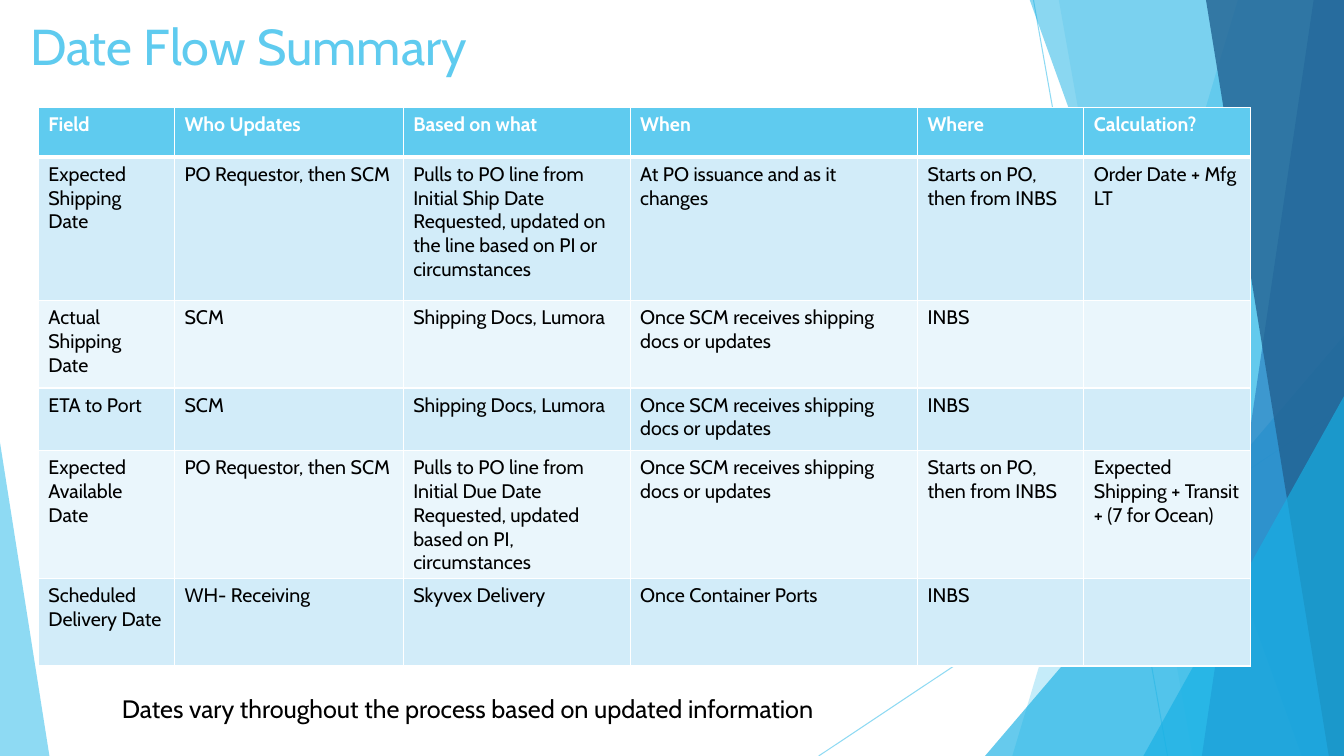
import pptx
import pptx.dml.color
import pptx.enum.shapes
import pptx.enum.text
import pptx.oxml
import pptx.oxml.ns
import pptx.util

Inches = pptx.util.Inches
Pt = pptx.util.Pt

THEME = {
    "font": "Cabin",
    "sky": "5FCBEF", "cyan": "17B0E4", "blue": "2E83C3", "navy": "226292",
    "white": "FFFFFF", "black": "000000",
    "bands": ("D2ECF9", "EAF6FC"),
    "title_size": 36, "note_size": 18, "table_size": 14,
    "hairline": 0.75, "border": 1, "header_border": 3,
}
WIDTH, HEIGHT = 13.33, 7.5

TITLE = "Date Flow Summary"
NOTE = "Dates vary throughout the process based on updated information"
HEADERS = ["Field", "Who Updates", "Based on what", "When", "Where", "Calculation?"]
RECEIPT = "Once SCM receives shipping docs or updates"
ROWS = [
    ["Expected Shipping Date", "PO Requestor, then SCM",
     "Pulls to PO line from Initial Ship Date Requested, updated on the line based on PI or circumstances",
     "At PO issuance and as it changes", "Starts on PO, then from INBS", "Order Date + Mfg LT"],
    ["Actual Shipping Date", "SCM", "Shipping Docs, Lumora", RECEIPT, "INBS", ""],
    ["ETA to Port", "SCM", "Shipping Docs, Lumora", RECEIPT, "INBS", ""],
    ["Expected Available Date", "PO Requestor, then SCM",
     "Pulls to PO line from Initial Due Date Requested, updated based on PI, circumstances",
     RECEIPT, "Starts on PO, then from INBS", "Expected Shipping + Transit + (7 for Ocean)"],
    ["Scheduled Delivery Date", "WH- Receiving", "Skyvex Delivery", "Once Container Ports", "INBS", ""],
]
COLUMN_WIDTHS = [1.35, 2.27, 2.25, 2.85, 1.65, 1.65]
ROW_HEIGHTS = [0.49, 1.42, 0.87, 0.62, 1.12, 0.87]

# Rays: start and end points.
RAYS = [((10.25, 0), (11.58, HEIGHT)), ((WIDTH, 4.03), (8.12, HEIGHT))]
# Shards, back to front. A "band" runs to the right edge: top x, bottom x.
# A "triangle" has left, top, width, height and the place of its tip.
SHARDS = [
    ("band", (12.28, 10.04), "sky", 36),
    ("band", (10.5, 11.83), "sky", 20),
    ("triangle", (9.77, 3.33, 3.56, 4.17, 1), "cyan", 66),
    ("band", (10.21, 12.91), "cyan", 50),
    ("band", (13.03, 11.92), "blue", 70),
    ("band", (11.96, 13.18), "navy", 80),
    ("triangle", (11.34, 3.93, 1.99, 3.57, 1), "cyan", 66),
    ("triangle", (0, 4.39, 0.49, 3.11, 0), "sky", 70),
]


def color(value):
    return pptx.dml.color.RGBColor.from_string(value)


def set_opacity(fill_parent, percent):
    for node in fill_parent.iter(pptx.oxml.ns.qn("a:srgbClr")):
        alpha = node.makeelement(pptx.oxml.ns.qn("a:alpha"), {"val": str(percent * 1000)})
        node.append(alpha)


def add_ray(page, start, end):
    ray = page.shapes.add_connector(
        pptx.enum.shapes.MSO_CONNECTOR.STRAIGHT, *map(Inches, start + end))
    ray.line.color.rgb = color(THEME["sky"])
    ray.line.width = Pt(THEME["hairline"])
    properties = ray._element.spPr
    set_opacity(properties, 70)
    properties.append(properties.makeelement(pptx.oxml.ns.qn("a:effectLst"), {}))


def add_shard(page, kind, geometry, color_name, opacity):
    if kind == "band":
        top_x, bottom_x = geometry
        corners = [(top_x, -0.01), (WIDTH, -0.01), (WIDTH, HEIGHT), (bottom_x, HEIGHT)]
        points = [(Inches(x), Inches(y)) for x, y in corners]
        builder = page.shapes.build_freeform(*points[0])
        builder.add_line_segments(points[1:], close=True)
        shard = builder.convert_to_shape()
    else:
        shard = page.shapes.add_shape(
            pptx.enum.shapes.MSO_SHAPE.ISOSCELES_TRIANGLE, *map(Inches, geometry[:4]))
        shard.adjustments[0] = geometry[4]
    shard.shadow.inherit = False
    shard.fill.solid()
    shard.fill.fore_color.rgb = color(THEME[color_name])
    set_opacity(shard._element.spPr, opacity)
    shard.line.fill.background()


def add_span(frame, text, size, text_color, bold=False):
    span = frame.paragraphs[0].add_run()
    span.text = text
    span.font.name = THEME["font"]
    span.font.size = Pt(size)
    span.font.bold = bold
    span.font.color.rgb = color(text_color)


def add_text(page, bounds, text, size, text_color, wrap):
    box = page.shapes.add_textbox(*map(Inches, bounds))
    frame = box.text_frame
    frame.word_wrap = wrap
    if not wrap:
        frame.auto_size = pptx.enum.text.MSO_AUTO_SIZE.SHAPE_TO_FIT_TEXT
    add_span(frame, text, size, text_color)


def set_borders(cell, top, bottom):
    """Draw white borders; top and bottom are widths in points."""
    properties = cell._tc.get_or_add_tcPr()
    widths = {"L": THEME["border"], "R": THEME["border"], "T": top, "B": bottom}
    for position, (side, width) in enumerate(widths.items()):
        properties.insert(position, pptx.oxml.parse_xml(
            f'<a:ln{side} {pptx.oxml.ns.nsdecls("a")} w="{Pt(width)}">'
            f'<a:solidFill><a:srgbClr val="{THEME["white"]}"/></a:solidFill></a:ln{side}>'))


def add_date_table(page):
    records = [HEADERS] + ROWS
    table = page.shapes.add_table(
        len(records), len(HEADERS), Inches(0.38), Inches(1.07),
        Inches(sum(COLUMN_WIDTHS)), Inches(sum(ROW_HEIGHTS))).table
    for column, width in zip(table.columns, COLUMN_WIDTHS):
        column.width = Inches(width)
    for index, (row, height, record) in enumerate(zip(table.rows, ROW_HEIGHTS, records)):
        row.height = Inches(height)
        header = index == 0
        fill = THEME["sky"] if header else THEME["bands"][(index - 1) % 2]
        top = THEME["header_border"] if index == 1 else THEME["border"]
        bottom = THEME["header_border"] if header else THEME["border"]
        for cell, text in zip(row.cells, record):
            cell.fill.solid()
            cell.fill.fore_color.rgb = color(fill)
            set_borders(cell, top, bottom)
            if text:
                add_span(cell.text_frame, text, THEME["table_size"],
                         THEME["white" if header else "black"], header)


def main():
    deck = pptx.Presentation()
    deck.slide_width, deck.slide_height = Inches(WIDTH), Inches(HEIGHT)
    page = deck.slides.add_slide(deck.slide_layouts[6])
    for start, end in RAYS:
        add_ray(page, start, end)
    for shard in SHARDS:
        add_shard(page, *shard)
    add_text(page, (0.2, 0.1, 9.4, 1.44), TITLE, THEME["title_size"], THEME["sky"], True)
    add_date_table(page)
    add_text(page, (1.11, 6.83, 7.64, 0.4), NOTE, THEME["note_size"], THEME["black"], False)
    deck.save("out.pptx")


if __name__ == "__main__":
    main()
